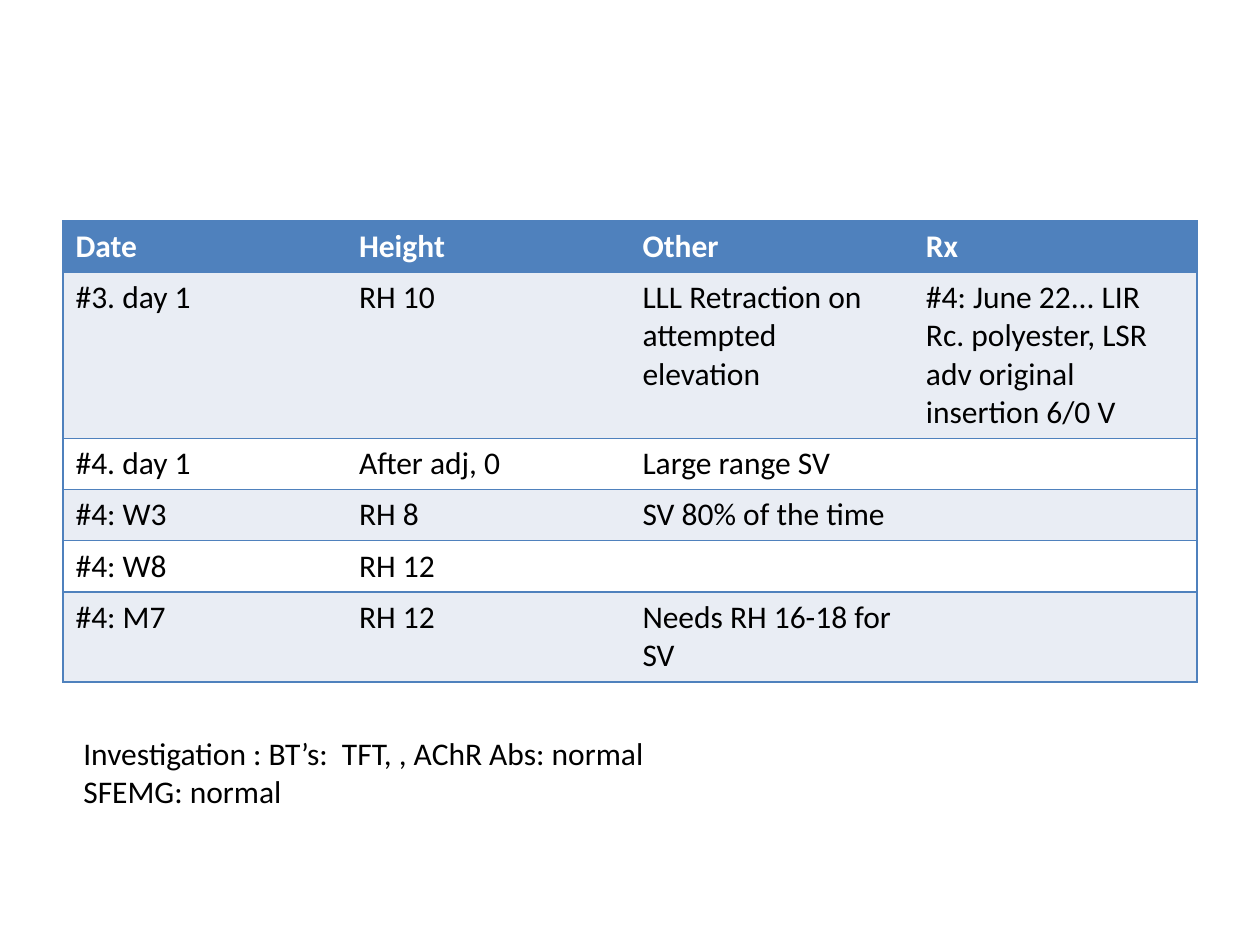
"""Build a slide with a table of treatment visits and a note on investigations."""
from dataclasses import dataclass

from lxml import etree
from pptx import Presentation
from pptx.dml.color import RGBColor
from pptx.enum.text import MSO_AUTO_SIZE
from pptx.oxml.ns import qn
from pptx.util import Pt

FIT_SHAPE = MSO_AUTO_SIZE.SHAPE_TO_FIT_TEXT
PIXEL = 914400 // 126
BLANK_LAYOUT = 6

HEADINGS = ["Date", "Height", "Other", "Rx"]
VISITS = [
    ["#3. day 1", "RH 10", "LLL Retraction on attempted elevation",
     "#4: June 22... LIR Rc. polyester, LSR adv original insertion 6/0 V"],
    ["#4. day 1", "After adj, 0", "Large range SV", ""],
    ["#4: W3", "RH 8", "SV 80% of the time", ""],
    ["#4: W8", "RH 12", "", ""],
    ["#4: M7", "RH 12", "Needs RH 16-18 for SV", ""],
]
ROW_HEIGHTS = [51, 166, 51, 51, 51, 90]
INVESTIGATIONS = ["Investigation : BT’s:  TFT, , AChR Abs: normal", "SFEMG: normal"]


@dataclass(frozen=True)
class Theme:
    font: str = "Calibri"
    size: int = 18
    line_width: int = 1
    accent: str = "4F81BD"
    band: str = "E9EDF4"
    paper: str = "FFFFFF"
    ink: str = "000000"


def px(length):
    return length * PIXEL


class SlideBuilder:
    def __init__(self, slide, theme):
        self.slide = slide
        self.theme = theme

    def style(self, paragraph, color, bold=False):
        font = paragraph.font
        font.name = self.theme.font
        font.size = Pt(self.theme.size)
        font.bold = bold
        font.color.rgb = RGBColor.from_string(color)

    def border(self, cell, side, visible):
        properties = cell._tc.get_or_add_tcPr()
        line = etree.SubElement(properties, qn(f"a:ln{side}"))
        if not visible:
            etree.SubElement(line, qn("a:noFill"))
            return
        line.set("w", str(Pt(self.theme.line_width)))
        fill = etree.SubElement(line, qn("a:solidFill"))
        etree.SubElement(fill, qn("a:srgbClr"), val=self.theme.accent)

    def table(self, left, top, width, row_heights, rows):
        theme = self.theme
        column_count = len(rows[0])
        table = self.slide.shapes.add_table(
            len(rows), column_count, px(left), px(top), px(width), px(sum(row_heights))
        ).table
        for column in table.columns:
            column.width = px(width) // column_count
        for row_index, (height, texts) in enumerate(zip(row_heights, rows)):
            table.rows[row_index].height = px(height)
            header = row_index == 0
            fill = theme.accent if header else (theme.paper, theme.band)[row_index % 2]
            for column_index, text in enumerate(texts):
                cell = table.cell(row_index, column_index)
                cell.text = text
                self.style(cell.text_frame.paragraphs[0],
                           theme.paper if header else theme.ink, header)
                self.border(cell, "L", column_index == 0)
                self.border(cell, "R", column_index == column_count - 1)
                self.border(cell, "T", True)
                self.border(cell, "B", True)
                cell.fill.solid()
                cell.fill.fore_color.rgb = RGBColor.from_string(fill)

    def text(self, left, top, width, height, lines):
        shape = self.slide.shapes.add_textbox(px(left), px(top), px(width), px(height))
        frame = shape.text_frame
        frame.word_wrap = True
        frame.auto_size = FIT_SHAPE
        frame.text = "\n".join(lines)
        for paragraph in frame.paragraphs:
            self.style(paragraph, self.theme.ink)


def main():
    presentation = Presentation()
    presentation.slide_width = px(1260)
    presentation.slide_height = px(945)
    slide = presentation.slides.add_slide(presentation.slide_layouts[BLANK_LAYOUT])
    builder = SlideBuilder(slide, Theme())
    builder.table(63, 221, 1134, ROW_HEIGHTS, [HEADINGS, *VISITS])
    builder.text(71, 728, 630, 89, INVESTIGATIONS)
    presentation.save("out.pptx")


if __name__ == "__main__":
    main()
